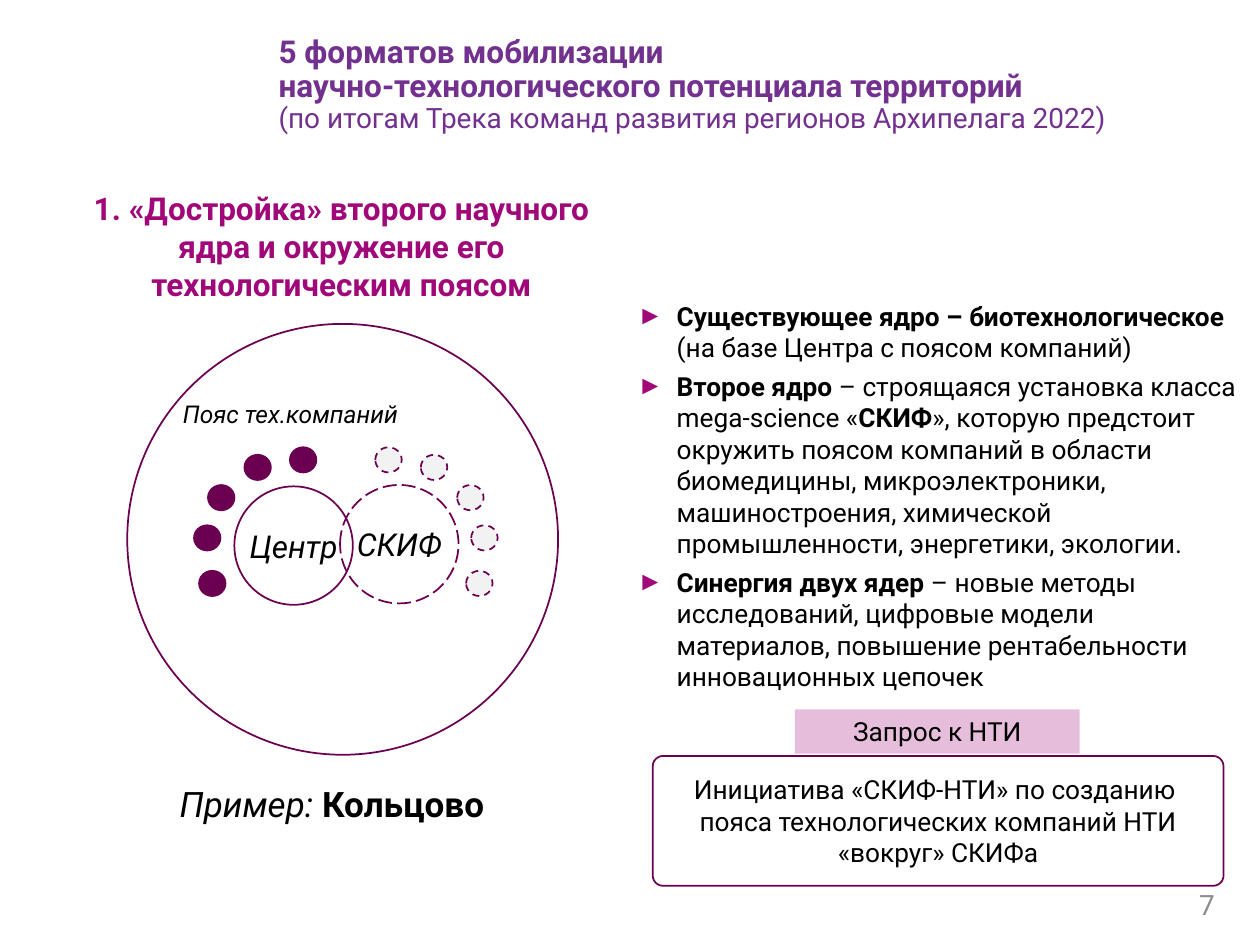
from lxml.etree import SubElement
from pptx import Presentation
from pptx.dml.color import RGBColor
from pptx.enum.dml import MSO_LINE_DASH_STYLE as Dash
from pptx.enum.shapes import MSO_SHAPE as Shape
from pptx.enum.text import MSO_ANCHOR as Anchor, MSO_AUTO_SIZE as AutoSize, PP_ALIGN as Align
from pptx.oxml.ns import qn
from pptx.util import Pt

THEME = {
    "font": "Roboto",
    "colors": {"ink": "000000", "title": "72318F", "accent": "A00778",
               "line": "6C0050", "planned": "F2F2F2", "number": "8C8C8C"},
    "sizes": {"title": 18, "subtitle": 16, "heading": 18, "core": 18, "belt": 14,
              "body": 15, "example": 20, "number": 16},
}
PLAIN, BOLD, ITALIC = {}, {"bold": True}, {"italic": True}

# Each paragraph is a list of (text, size, color, style); "\n" is a line break.
TITLE = [
    ("5 форматов мобилизации \nнаучно-технологического потенциала территорий\n", "title", "title", BOLD),
    ("(по итогам Трека команд развития регионов Архипелага 2022)", "subtitle", "title", PLAIN),
]
HEADING = [("1. «Достройка» второго научного ядра и окружение его технологическим поясом",
            "heading", "accent", BOLD)]
EXAMPLE = [("Пример: ", "example", "ink", ITALIC), ("Кольцово", "example", "ink", BOLD)]
BELT = [("Пояс тех.компаний", "belt", "ink", ITALIC)]
REQUEST = [("Запрос к НТИ", "body", "ink", PLAIN)]
INITIATIVE = [("Инициатива «СКИФ-НТИ» по созданию \nпояса технологических компаний НТИ «вокруг» СКИФа",
               "body", "ink", PLAIN)]
NUMBER = [("7", "number", "number", PLAIN)]
POINTS = [[(text, "body", "ink", style) for text, style in point] for point in (
    [("Существующее ядро – биотехнологическое ", BOLD),
     ("(на базе Центра с поясом компаний)", PLAIN)],
    [("Второе ядро ", BOLD),
     ("– строящаяся установка класса mega-science «", PLAIN),
     ("СКИФ", BOLD),
     ("», которую предстоит окружить поясом компаний в области биомедицины, "
      "микроэлектроники, машиностроения, химической промышленности, энергетики, экологии.", PLAIN)],
    [("Синергия двух ядер ", BOLD),
     ("– новые методы исследований, цифровые модели материалов, повышение "
      "рентабельности инновационных цепочек", PLAIN)],
)]

# Circles as center x, center y, width, height
AXIS = 197.6
TERRITORY = (195.8, 308.2, 246.2, 246.2)
CORES = [("Центр", (167.8, 311.8, 67.7, 67.7), None),
         ("СКИФ", (228.2, 311, 67.7, 67.7), Dash.LONG_DASH)]
COMPANY_SIZE = (15.1, 14.4)
COMPANIES = [(24.4, 262.8), (50.4, 267.1), (71.2, 284.4), (79.2, 307.4), (76.3, 333.4)]


def color(name):
    return RGBColor.from_string(THEME["colors"][name])


def set_values(target, values):
    for name, value in values.items():
        setattr(target, name, value)


def add_runs(paragraph, runs):
    for text, size, color_name, style in runs:
        for index, line in enumerate(text.split("\n")):
            if index:
                paragraph.add_line_break()
            if not line:
                continue
            run = paragraph.add_run()
            run.text = line
            set_values(run.font, {"name": THEME["font"], "size": Pt(THEME["sizes"][size]),
                                  "bold": False, "italic": False, **style})
            run.font.color.rgb = color(color_name)


def write(shape, paragraphs, align=Align.CENTER, prepare=None, spacing=None, **frame_values):
    frame = shape.text_frame
    set_values(frame, {"word_wrap": True, "auto_size": AutoSize.NONE,
                       "vertical_anchor": Anchor.TOP, **frame_values})
    for index, runs in enumerate(paragraphs):
        paragraph = frame.add_paragraph() if index else frame.paragraphs[0]
        if prepare:
            prepare(paragraph, index)
        set_values(paragraph, {"alignment": align, "line_spacing": spacing})
        add_runs(paragraph, runs)


def add_bullet(paragraph, index):
    properties = paragraph._p.get_or_add_pPr()
    indent = Pt(22.5)
    properties.set("marL", str(indent))
    properties.set("indent", str(-indent))
    bullet_color = SubElement(properties, qn("a:buClr"))
    SubElement(bullet_color, qn("a:srgbClr"), val=THEME["colors"]["accent"])
    SubElement(properties, qn("a:buFont"), typeface="Arial")
    SubElement(properties, qn("a:buChar"), char="►")
    tabs = SubElement(properties, qn("a:tabLst"))
    SubElement(tabs, qn("a:tab"), pos=str(Pt(42.5)), algn="l")
    set_values(paragraph, {"space_before": Pt(2 if index else 0), "space_after": Pt(2)})


def add_text(shapes, box, paragraphs, **options):
    shape = shapes.add_textbox(*map(Pt, box))
    write(shape, paragraphs, **options)


def add_outline(shapes, kind, box, fill=None, line="line", dash=None):
    shape = shapes.add_shape(kind, *map(Pt, box))
    shape.shadow.inherit = False
    if fill:
        shape.fill.solid()
        shape.fill.fore_color.rgb = color(fill)
    else:
        shape.fill.background()
    if line:
        shape.line.color.rgb = color(line)
        set_values(shape.line, {"width": Pt(1), "dash_style": dash})
    else:
        shape.line.fill.background()
    return shape


def add_circle(shapes, circle, **look):
    x, y, width, height = circle
    return add_outline(shapes, Shape.OVAL, (x - width / 2, y - height / 2, width, height), **look)


def add_territory(slide):
    shapes = slide.shapes.add_group_shape().shapes
    add_circle(shapes, TERRITORY)
    for name, circle, dash in CORES:
        core = add_circle(shapes, circle, dash=dash)
        write(core, [[(name, "core", "ink", ITALIC)]], word_wrap=False, vertical_anchor=Anchor.MIDDLE)
    for side, fill, dash in ((-1, "line", None), (1, "planned", Dash.DASH)):
        for offset, y in COMPANIES:
            add_circle(shapes, (AXIS + side * offset, y, *COMPANY_SIZE), fill=fill, dash=dash)
    add_text(shapes, (46, 224.6, 240, 24.5), [BELT])


def add_request(slide):
    label = add_outline(slide.shapes, Shape.RECTANGLE, (454.3, 405.4, 162.7, 25.2), "accent", None)
    solid = label.fill.fore_color._xFill
    SubElement(solid.find(qn("a:srgbClr")), qn("a:alpha"), val="26000")
    write(label, [REQUEST])
    frame = add_outline(slide.shapes, Shape.ROUNDED_RECTANGLE, (373, 432, 326.2, 74.2))
    frame.adjustments[0] = 0.08
    write(frame, [INITIATIVE], vertical_anchor=Anchor.MIDDLE, margin_left=0, margin_right=0)


def main():
    presentation = Presentation()
    set_values(presentation, {"slide_width": Pt(720), "slide_height": Pt(540)})
    slide = presentation.slides.add_slide(presentation.slide_layouts[5])
    title = slide.shapes.title
    set_values(title, {"left": Pt(152), "top": Pt(11.5), "width": Pt(549.4), "height": Pt(74.2)})
    write(title, [TITLE], align=Align.LEFT, spacing=0.9, vertical_anchor=Anchor.MIDDLE)
    add_text(slide.shapes, (27.4, 104.4, 335.5, 72.7), [HEADING])
    add_territory(slide)
    add_text(slide.shapes, (36, 443.5, 307.4, 31.7), [EXAMPLE])
    add_text(slide.shapes, (357.1, 167.8, 362.9, 215.3), POINTS, align=Align.LEFT, prepare=add_bullet)
    add_request(slide)
    add_text(slide.shapes, (539.3, 502.6, 162, 28.8), [NUMBER], align=Align.RIGHT,
             vertical_anchor=Anchor.MIDDLE)
    presentation.save("out.pptx")


if __name__ == "__main__":
    main()
